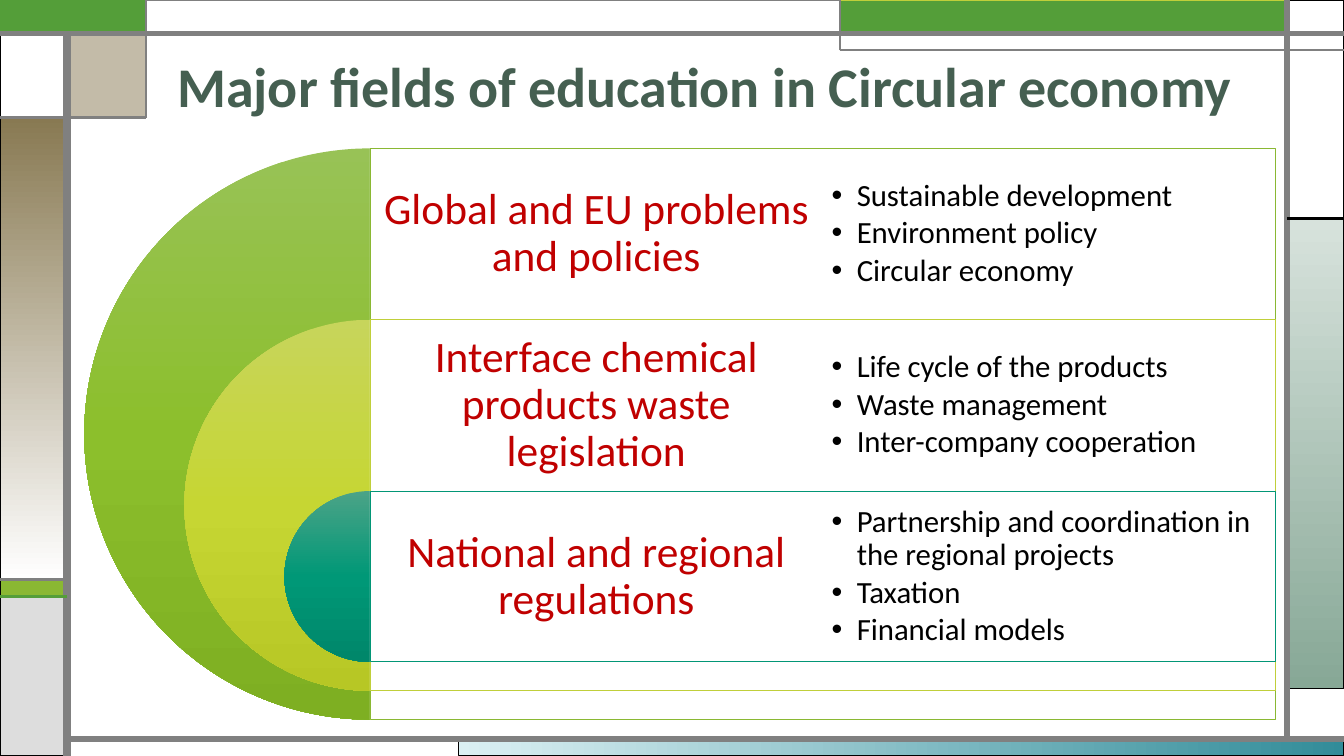
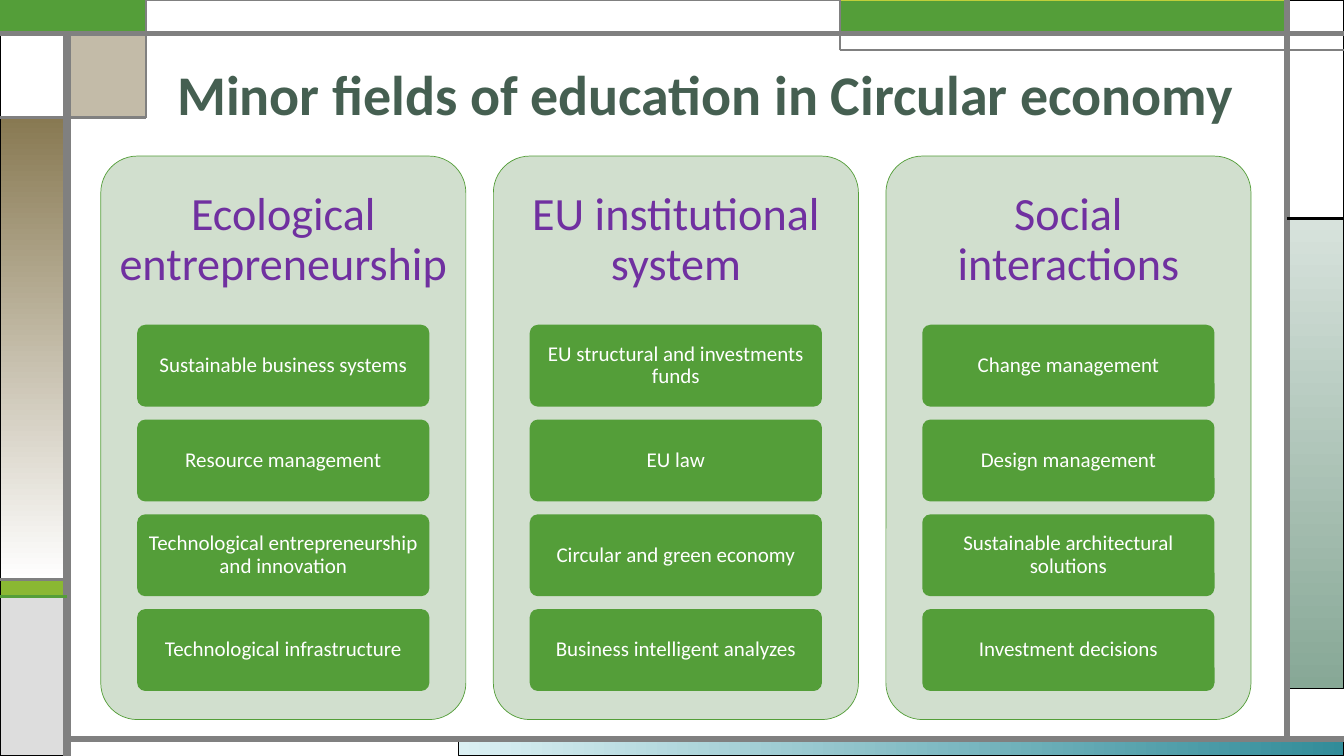
from lxml import etree
from pptx import Presentation
from pptx.dml.color import RGBColor
from pptx.enum.shapes import MSO_CONNECTOR, MSO_SHAPE
from pptx.enum.text import MSO_ANCHOR, PP_ALIGN
from pptx.oxml.ns import qn
from pptx.util import Pt

RECT = MSO_SHAPE.RECTANGLE
ROUND = MSO_SHAPE.ROUNDED_RECTANGLE
PIE = MSO_SHAPE.PIE
LINE = MSO_CONNECTOR.STRAIGHT
LEFT, CENTER = PP_ALIGN.LEFT, PP_ALIGN.CENTER
MIDDLE, BOTTOM = MSO_ANCHOR.MIDDLE, MSO_ANCHOR.BOTTOM

WIDE, HIGH = 960, 540
FONT = "Calibri"
HEX = {
    "white": "FFFFFF", "black": "000000", "gray": "808080", "pale": "DDDDDD",
    "green": "549E39", "leaf": "8AB833", "lime": "C0CF3A", "teal": "029676",
    "sand": "887952", "title": "455F51", "red": "C00000", "purple": "7030A0",
    "card": "D1DFCE", "ice": "DBF0F3", "sea": "328C99",
    "mist": "D7E2DC", "sage": "87A896",
    "leaf1": "98C256", "leaf2": "8CBF2C", "leaf3": "7EAF22",
    "lime1": "C7D55B", "lime2": "C6D633", "lime3": "B7C725",
    "teal1": "4BA387", "teal2": "009877", "teal3": "00876A",
}

X1, X2, X3, X4 = 48, 104, 600, 919.5
Y1, Y2, Y3, Y4, Y5, Y6 = 24, 84, 156, 414, 426, 528
PANELS = [
    (327.6, Y6, WIDE, HIGH, ("ice", "sea"), "black", 0.75, 0, 100),
    (X4, Y3, WIDE, 492, ("mist", "sage"), "black", 0.75, 90, 100),
    (0, Y4, X1, Y5, "leaf", "black", 0.75, 0, 100),
    (0, Y5, X1, HIGH, "pale", "black", 0.75, 0, 100),
    (X4, 0, WIDE, Y3, "white", "black", 0.75, 0, 100),
    (X3, 0, X4, Y1, "green", "lime", 0.75, 0, 100),
    (X1, Y1, X2, Y2, "sand", "black", 0.75, 0, 50),
    (0, Y2, X1, Y4, ("sand", "white"), "black", 0.75, 90, 100),
    (0, Y1, X1, Y2, "white", "black", 0.75, 0, 100),
    (0, 0, X2, Y1, "green", "green", 1.5, 0, 100),
    (X2, 0, X3, Y1, "white", "gray", 0.75, 0, 100),
]
RULES = [
    (X1, HIGH, X1, Y1, "gray", 6),
    (X1, Y6, WIDE, Y6, "gray", 4.5),
    (X4, Y6, X4, 0, "gray", 4.5),
    (0, Y1, WIDE, Y1, "gray", 3),
    (WIDE, 36, X3, 36, "gray", 1.5),
    (X3, 36, X3, 0, "gray", 1.5),
    (X4, Y3, WIDE, Y3, "black", 2.25),
    (X2, 0, X2, Y2, "gray", 1.5),
    (X2, Y2, 0, Y2, "gray", 2.25),
    (X1, Y4, 0, Y4, "gray", 2.25),
    (X1, Y5, 0, Y5, "green", 2.25),
]
ROWS = [
    ("leaf", "Global and EU problems and policies",
     ["Sustainable development", "Environment policy", "Circular economy"]),
    ("lime", "Interface chemical products waste legislation",
     ["Life cycle of the products", "Waste management",
      "Inter-company cooperation"]),
    ("teal", "National and regional regulations",
     ["Partnership and coordination in the regional projects", "Taxation",
      "Financial models"]),
]
CARDS = [
    ("Ecological entrepreneurship",
     ["Sustainable business systems", "Resource management",
      "Technological entrepreneurship and innovation",
      "Technological infrastructure"]),
    ("EU institutional system",
     ["EU structural and investments funds", "EU law",
      "Circular and green economy", "Business intelligent analyzes"]),
    ("Social interactions",
     ["Change management", "Design management",
      "Sustainable architectural solutions", "Investment decisions"]),
]


def color(name):
    return RGBColor.from_string(HEX[name])


class Deck:
    def __init__(self):
        self.show = Presentation()
        self.show.slide_width, self.show.slide_height = Pt(WIDE), Pt(HIGH)
        self.slide = None

    def page(self, title, top, width):
        self.slide = self.show.slides.add_slide(self.show.slide_layouts[6])
        for x, y, right, low, fill, line, size, turn, alpha in PANELS:
            self.shape(RECT, (x, y, right - x, low - y), fill, line, size,
                       turn=turn, alpha=alpha)
        for rule in RULES:
            self.rule(*rule)
        self.text((119.5, top, width, 57), [title], 40, "title", LEFT,
                  BOTTOM, (7.2, 3.6), bold=True)

    def shape(self, kind, box, fill, line=None, size=0.5, adjust=(),
              turn=90, alpha=100):
        item = self.slide.shapes.add_shape(kind, *map(Pt, box))
        item.shadow.inherit = False
        for i, value in enumerate(adjust):
            item.adjustments[i] = value
        if isinstance(fill, tuple):
            self.blend(item, fill, turn)
        else:
            item.fill.solid()
            item.fill.fore_color.rgb = color(fill)
        if alpha < 100:
            tint = item._element.spPr.find(qn("a:solidFill"))[0]
            etree.SubElement(tint, qn("a:alpha"), val=str(alpha * 1000))
        if line:
            item.line.color.rgb = color(line)
            item.line.width = Pt(size)
        else:
            item.line.fill.background()
        return item

    def blend(self, item, names, turn):
        item.fill.gradient()
        item.fill.gradient_angle = -turn % 360
        stops = item._element.spPr.find(qn("a:gradFill")).find(qn("a:gsLst"))
        for stop in list(stops):
            stops.remove(stop)
        for i, name in enumerate(names):
            place = str(100000 * i // (len(names) - 1))
            stop = etree.SubElement(stops, qn("a:gs"), pos=place)
            etree.SubElement(stop, qn("a:srgbClr"), val=HEX[name])

    def rule(self, x1, y1, x2, y2, name, size):
        item = self.slide.shapes.add_connector(LINE, *map(Pt, (x1, y1, x2, y2)))
        item.line.color.rgb = color(name)
        item.line.width = Pt(size)
        etree.SubElement(item._element.spPr, qn("a:effectLst"))

    def text(self, box, lines, size, name, align, anchor, inset, **look):
        item = self.slide.shapes.add_textbox(*map(Pt, box))
        self.label(item, lines, size, name, align, anchor, inset, **look)

    def label(self, item, lines, size, name, align=CENTER, anchor=MIDDLE,
              inset=(3, 2), bold=False, dots=False):
        frame = item.text_frame
        frame.word_wrap = True
        frame.vertical_anchor = anchor
        frame.margin_left = frame.margin_right = Pt(inset[0])
        frame.margin_top = frame.margin_bottom = Pt(inset[1])
        for i, line in enumerate(lines):
            para = frame.add_paragraph() if i else frame.paragraphs[0]
            para.alignment = align
            para.line_spacing = 0.9
            if dots:
                self.dot(para)
            run = para.add_run()
            run.text = line
            run.font.name = FONT
            run.font.size = Pt(size)
            run.font.bold = bold
            run.font.color.rgb = color(name)

    def dot(self, para):
        para.space_after = Pt(3)
        props = para._p.get_or_add_pPr()
        props.set("marL", str(Pt(18)))
        props.set("indent", str(-Pt(18)))
        etree.SubElement(props, qn("a:buFont"), typeface="Arial")
        etree.SubElement(props, qn("a:buChar"), char="•")

    def row(self, i, name, head, points):
        x, y, width, step = 264.25, 106 + 122.4 * i, 646.5, 122.4
        size, half = 408 - 143 * i, width / 2
        shades = tuple(f"{name}{n}" for n in (1, 2, 3))
        self.shape(PIE, (x - size / 2, y, size, size), shades,
                   adjust=(54, 162))
        self.shape(RECT, (x, y, width, size), "white", name, alpha=90)
        self.text((x, y, half, step), [head], 31, "red", CENTER, MIDDLE,
                  (9.4, 9.4))
        self.text((x + half, y, half, step), points, 22, "black", LEFT,
                  MIDDLE, (6.5, 6.5), dots=True)

    def card(self, i, head, names):
        x, y, width = 72 + 280.4 * i, 111.5, 260.75
        self.shape(ROUND, (x, y, width, 402.5), "card", "green",
                   adjust=(0.1,))
        self.text((x, y, width, 121), [head], 33, "purple", CENTER, MIDDLE,
                  (10, 10))
        for j, name in enumerate(names):
            box = (x + 26, 232 + 67.7 * j, 208.75, 58.5)
            item = self.shape(ROUND, box, "green", adjust=(0.1,))
            self.label(item, [name], 15, "white")


def main():
    deck = Deck()
    deck.page("Major fields of education in Circular economy", 31.75, 790.5)
    for i, row in enumerate(ROWS):
        deck.row(i, *row)
    deck.page("Minor fields of education in Circular economy", 37.5, 780)
    for i, card in enumerate(CARDS):
        deck.card(i, *card)
    deck.show.save("out.pptx")


if __name__ == "__main__":
    main()
